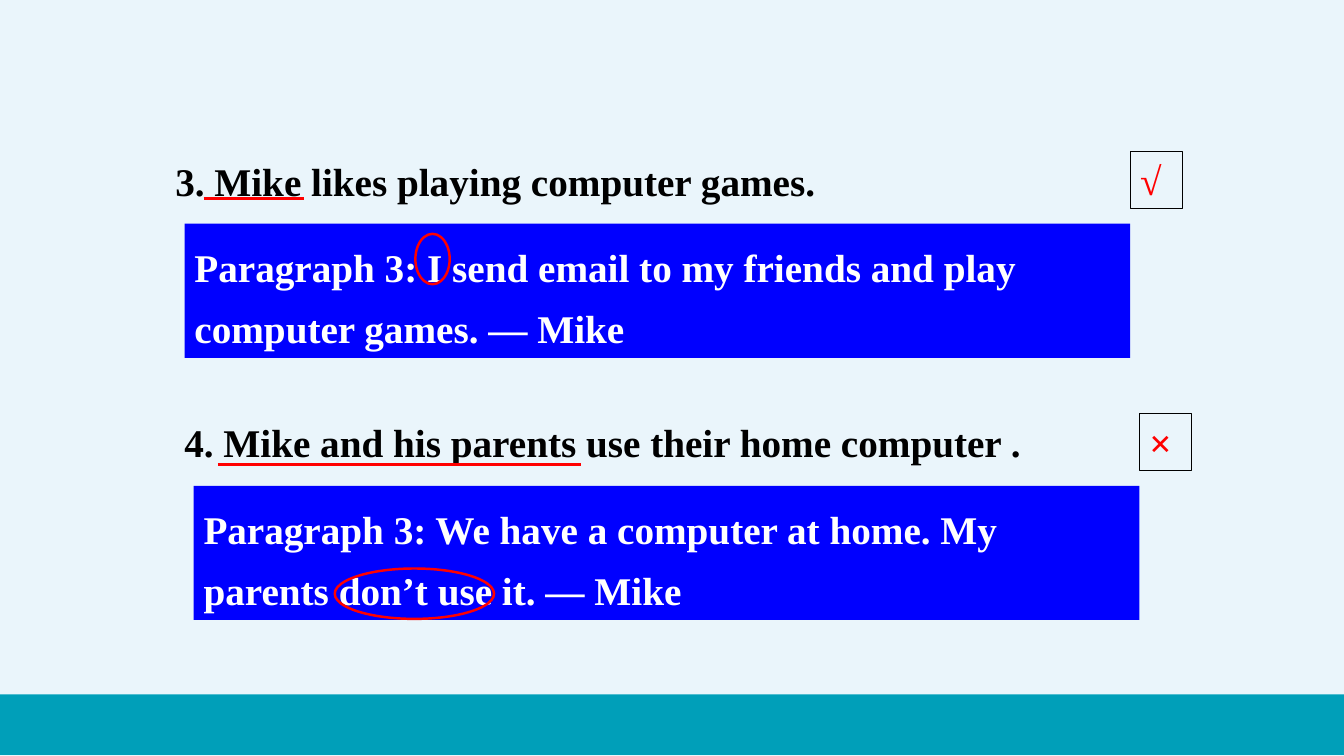
from lxml.etree import SubElement
from pptx import Presentation
from pptx.dml.color import RGBColor
from pptx.enum.shapes import MSO_CONNECTOR, MSO_SHAPE
from pptx.enum.text import MSO_ANCHOR, MSO_AUTO_SIZE, PP_ALIGN
from pptx.oxml.ns import qn
from pptx.util import Inches, Pt


def color(value):
    return RGBColor.from_string(value)


class ExerciseSlide:
    font = "Times New Roman"
    size = 28
    background = "EAF5FB"
    band = "009FB9"
    quote = "0000FF"
    accent = "FF0000"
    ink = "000000"
    white = "FFFFFF"

    def __init__(self, presentation):
        self.slide = presentation.slides.add_slide(presentation.slide_layouts[6])
        fill = self.slide.background.fill
        fill.solid()
        fill.fore_color.rgb = color(self.background)

    def set_text(self, shape, text, text_color, spacing):
        frame = shape.text_frame
        frame.word_wrap = True
        frame.auto_size = MSO_AUTO_SIZE.SHAPE_TO_FIT_TEXT
        frame.vertical_anchor = MSO_ANCHOR.TOP
        frame.text = text
        paragraph = frame.paragraphs[0]
        paragraph.alignment = PP_ALIGN.LEFT
        paragraph.line_spacing = spacing
        font = paragraph.runs[0].font
        font.name = self.font
        font.size = Pt(self.size)
        font.bold = True
        font.color.rgb = color(text_color)

    def shape(self, kind, box, fill=None, line=None, width=0.75):
        shape = self.slide.shapes.add_shape(kind, *map(Inches, box))
        shape.shadow.inherit = False
        if fill:
            shape.fill.solid()
            shape.fill.fore_color.rgb = color(fill)
        else:
            shape.fill.background()
        if line:
            shape.line.color.rgb = color(line)
            shape.line.width = Pt(width)
        else:
            shape.line.fill.background()
        return shape

    def footer(self):
        self.shape(MSO_SHAPE.RECTANGLE, (0, 6.89, 13.33, 0.6), self.band)

    def statement(self, box, text):
        textbox = self.slide.shapes.add_textbox(*map(Inches, box))
        self.set_text(textbox, text, self.ink, 1.3)

    def underline(self, left, right, top):
        rule = self.slide.shapes.add_connector(
            MSO_CONNECTOR.STRAIGHT, Inches(left), Inches(top), Inches(right), Inches(top))
        rule.line.color.rgb = color(self.accent)
        rule.line.width = Pt(2.5)
        SubElement(rule._element.spPr, qn("a:effectLst"))

    def verdict(self, left, top, mark):
        square = self.shape(MSO_SHAPE.RECTANGLE, (left, top, 0.52, 0.57), line=self.ink)
        self.set_text(square, mark, self.accent, 1.0)

    def evidence(self, left, top, text):
        panel = self.shape(MSO_SHAPE.RECTANGLE, (left, top, 9.38, 1.33), self.quote)
        self.set_text(panel, text, self.white, 1.3)

    def circle(self, box):
        self.shape(MSO_SHAPE.OVAL, box, line=self.accent, width=1.75)


def main():
    presentation = Presentation()
    presentation.slide_width = Inches(13.33)
    presentation.slide_height = Inches(7.5)
    exercise = ExerciseSlide(presentation)
    exercise.footer()

    questions = [
        ((1.64, 1.37, 10.5, 0.65), "3. Mike likes playing computer games.",
         (2.02, 3.02, 1.97), "√", (1.83, 2.22),
         "Paragraph 3: I send email to my friends and play computer games. — Mike",
         (4.12, 2.32, 0.34, 0.5)),
        ((1.73, 3.96, 10.5, 0.71), "4. Mike and his parents use their home computer .",
         (2.16, 5.76, 4.61), "×", (1.92, 4.82),
         "Paragraph 3: We have a computer at home. My parents don’t use it. — Mike",
         (3.32, 5.64, 1.58, 0.5)),
    ]
    for statement_box, statement, subject, mark, (left, top), quotation, clue in questions:
        exercise.statement(statement_box, statement)
        exercise.underline(*subject)
        exercise.verdict(left + 9.38, top - 0.72, mark)
        exercise.evidence(left, top, quotation)
        exercise.circle(clue)

    presentation.save("out.pptx")


if __name__ == "__main__":
    main()
